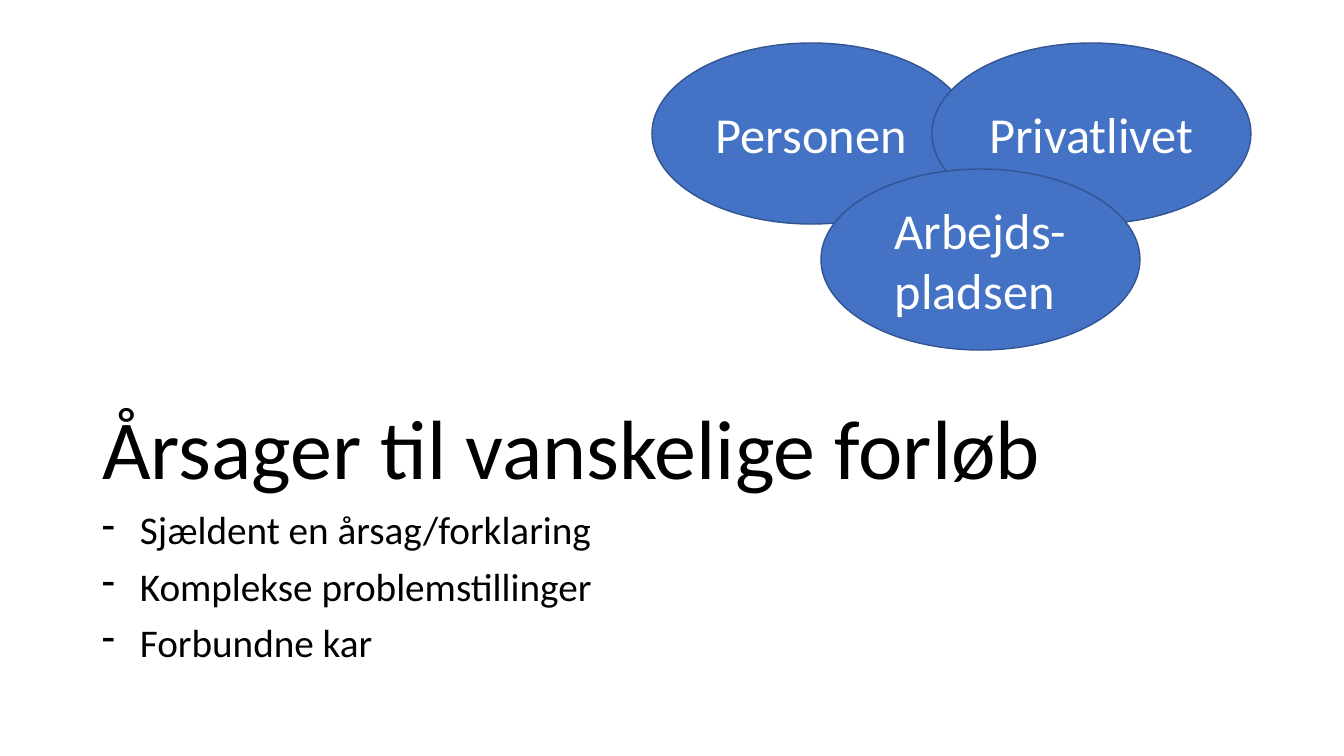
from lxml.etree import SubElement
from pptx import Presentation
from pptx.dml.color import RGBColor
from pptx.enum.shapes import MSO_SHAPE
from pptx.enum.text import MSO_ANCHOR, MSO_AUTO_SIZE, PP_ALIGN
from pptx.oxml.ns import qn
from pptx.util import Pt

SLIDE_WIDTH, SLIDE_HEIGHT = 1344, 756
EMU_PER_PX = 12192000 / SLIDE_WIDTH


def px(length):
    return round(length * EMU_PER_PX)


def color(hex_value):
    return RGBColor.from_string(hex_value)


def apply_formats(target, formats):
    for name, value in formats.items():
        setattr(target, name, value)


class SlideBuilder:
    font_name = "Calibri"
    text_color = "000000"
    ellipse_fill = "4472C4"
    ellipse_line = "325491"
    ellipse_text = "FFFFFF"
    ellipse_size = (319, 181)
    bullet_indent = 38

    def __init__(self, presentation):
        self.slide = presentation.slides.add_slide(presentation.slide_layouts[5])

    def fill_text(self, shape, lines, size, hex_value, anchor, paragraph_formats):
        frame = shape.text_frame
        frame.text = "\n".join(lines)
        apply_formats(frame, {
            "word_wrap": True,
            "auto_size": MSO_AUTO_SIZE.NONE,
            "vertical_anchor": anchor,
        })
        for paragraph in frame.paragraphs:
            apply_formats(paragraph, paragraph_formats)
            font = paragraph.runs[0].font
            apply_formats(font, {"name": self.font_name, "size": Pt(size)})
            font.color.rgb = color(hex_value)
        return frame.paragraphs

    def title(self, text, left, top, width, height):
        shape = self.slide.shapes.title
        apply_formats(shape, {
            "left": px(left), "top": px(top),
            "width": px(width), "height": px(height),
        })
        self.fill_text(shape, [text], 60, self.text_color, MSO_ANCHOR.BOTTOM,
                       {"alignment": PP_ALIGN.LEFT, "line_spacing": 0.9})

    def bullets(self, lines, left, top, width, height):
        shape = self.slide.shapes.add_textbox(px(left), px(top), px(width), px(height))
        paragraphs = self.fill_text(shape, lines, 28, self.text_color, MSO_ANCHOR.TOP,
                                    {"line_spacing": 0.9, "space_before": Pt(10)})
        for paragraph in paragraphs:
            properties = paragraph._p.get_or_add_pPr()
            properties.set("marL", str(px(self.bullet_indent)))
            properties.set("indent", str(-px(self.bullet_indent)))
            SubElement(properties, qn("a:buChar")).set("char", "-")

    def ellipse(self, text, left, top):
        width, height = self.ellipse_size
        shape = self.slide.shapes.add_shape(
            MSO_SHAPE.OVAL, px(left), px(top), px(width), px(height))
        shape.shadow.inherit = False
        shape.fill.solid()
        shape.fill.fore_color.rgb = color(self.ellipse_fill)
        shape.line.color.rgb = color(self.ellipse_line)
        shape.line.width = Pt(1)
        self.fill_text(shape, [text], 36, self.ellipse_text, MSO_ANCHOR.MIDDLE,
                       {"alignment": PP_ALIGN.CENTER})


def main():
    presentation = Presentation()
    apply_formats(presentation, {
        "slide_width": px(SLIDE_WIDTH), "slide_height": px(SLIDE_HEIGHT),
    })
    builder = SlideBuilder(presentation)
    builder.title("Årsager til vanskelige forløb", 92, 188, 1159, 315)
    builder.bullets(
        ["Sjældent en årsag/forklaring", "Komplekse problemstillinger", "Forbundne kar"],
        92, 506, 1159, 165)
    for text, left, top in [
        ("Personen", 652, 43),
        ("Privatlivet", 932, 43),
        ("Arbejds-pladsen ", 821, 169),
    ]:
        builder.ellipse(text, left, top)
    presentation.save("out.pptx")


if __name__ == "__main__":
    main()
